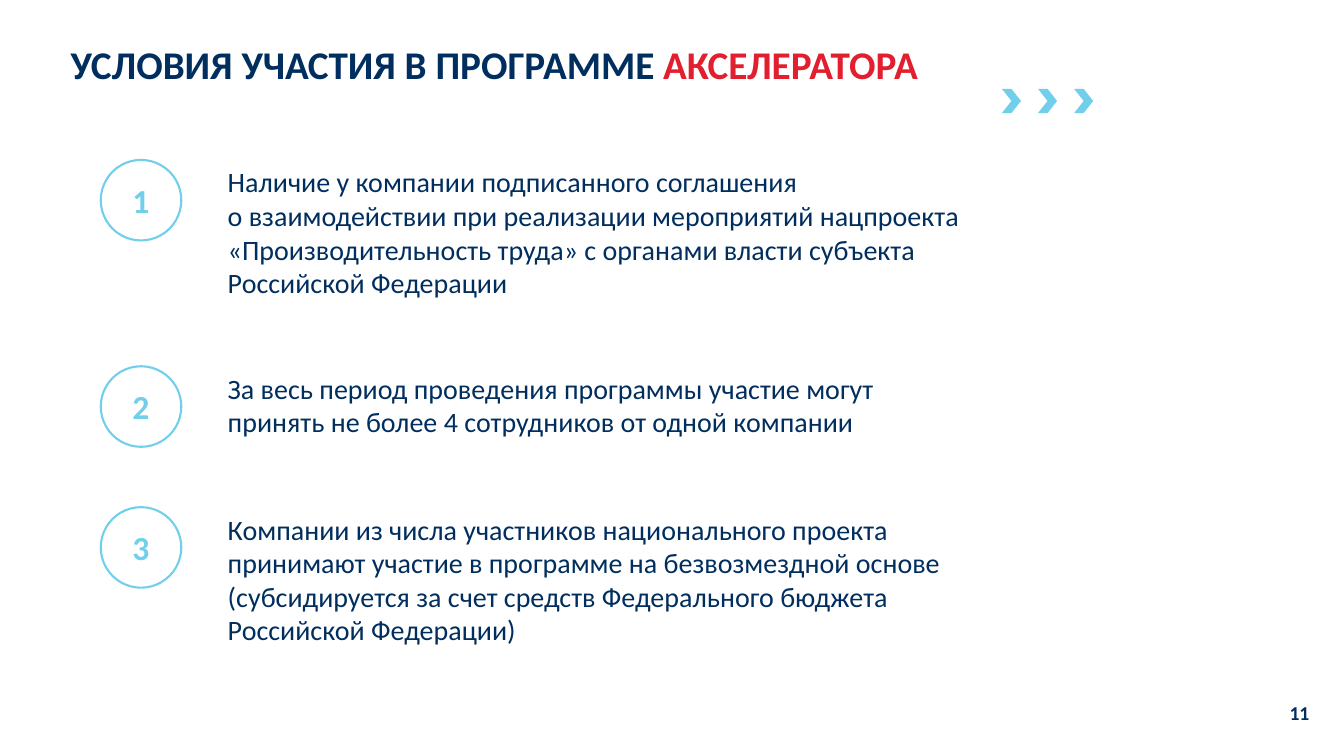
"""Build the slide on conditions for taking part in the accelerator programme."""
from pptx import Presentation
from pptx.dml.color import RGBColor
from pptx.enum.shapes import MSO_SHAPE
from pptx.enum.text import MSO_ANCHOR, MSO_AUTO_SIZE, PP_ALIGN
from pptx.util import Cm, Pt

LEFT, CENTER, JUSTIFY = PP_ALIGN.LEFT, PP_ALIGN.CENTER, PP_ALIGN.JUSTIFY
MIDDLE, BOTTOM = MSO_ANCHOR.MIDDLE, MSO_ANCHOR.BOTTOM
OVAL, CHEVRON = MSO_SHAPE.OVAL, MSO_SHAPE.CHEVRON
NO_AUTOFIT = MSO_AUTO_SIZE.NONE

FONT = "Calibri"
COLORS = {"navy": "002E5E", "red": "E21F2E", "sky": "71CFEB"}

TITLE = [("УСЛОВИЯ УЧАСТИЯ В ПРОГРАММЕ ", "navy"), ("АКСЕЛЕРАТОРА", "red")]
PAGE_NUMBER = "11"
CONDITIONS = [
    {"top": 4.03, "width": 25.27, "lines": [
        "Наличие у компании подписанного соглашения",
        "о взаимодействии при реализации мероприятий нацпроекта",
        "«Производительность труда» с органами власти субъекта",
        "Российской Федерации",
    ]},
    {"top": 9.23, "width": 22.07, "lines": [
        "За весь период проведения программы участие могут",
        "принять не более 4 сотрудников от одной компании",
    ]},
    {"top": 12.78, "width": 26.95, "lines": [
        "Компании из числа участников национального проекта",
        "принимают участие в программе на безвозмездной основе",
        "(субсидируется за счет средств Федерального бюджета",
        "Российской Федерации)",
    ]},
]

CIRCLE_LEFT, CIRCLE_SIZE = 2.54, 2.03
TEXT_LEFT, LINE_HEIGHT, TEXT_PADDING = 5.49, 0.86, 0.25
CHEVRON_COUNT, CHEVRON_LEFT, CHEVRON_STEP = 3, 25.25, 0.91


def color(name):
    return RGBColor.from_string(COLORS[name])


def add_run(paragraph, text, size, color_name, bold=False):
    run = paragraph.add_run()
    run.text = text
    run.font.name = FONT
    run.font.size = Pt(size)
    run.font.bold = bold
    run.font.color.rgb = color(color_name)


def clear_margins(frame):
    frame.margin_left = frame.margin_right = 0
    frame.margin_top = frame.margin_bottom = 0


def add_title(slide):
    title = slide.shapes.title
    title.left, title.top, title.width, title.height = Cm(1.78), Cm(1.07), Cm(26.42), Cm(1.14)
    frame = title.text_frame
    clear_margins(frame)
    frame.auto_size = NO_AUTOFIT
    frame.vertical_anchor = BOTTOM
    paragraph = frame.paragraphs[0]
    paragraph.alignment = LEFT
    paragraph.line_spacing = Pt(37)
    for text, color_name in TITLE:
        add_run(paragraph, text, 28, color_name, bold=True)


def add_text(slide, left, top, width, height, lines, size, alignment, bold=False):
    frame = slide.shapes.add_textbox(Cm(left), Cm(top), Cm(width), Cm(height)).text_frame
    frame.word_wrap = True
    for index, line in enumerate(lines):
        paragraph = frame.add_paragraph() if index else frame.paragraphs[0]
        paragraph.alignment = alignment
        add_run(paragraph, line, size, "navy", bold)
    return frame


def add_chevrons(slide):
    for index in range(CHEVRON_COUNT):
        left = CHEVRON_LEFT + index * CHEVRON_STEP
        chevron = slide.shapes.add_shape(CHEVRON, Cm(left), Cm(2.24), Cm(0.48), Cm(0.61))
        chevron.shadow.inherit = False
        chevron.fill.solid()
        chevron.fill.fore_color.rgb = color("sky")
        chevron.line.fill.background()


def add_number_circle(slide, number, top):
    circle = slide.shapes.add_shape(
        OVAL, Cm(CIRCLE_LEFT), Cm(top), Cm(CIRCLE_SIZE), Cm(CIRCLE_SIZE))
    circle.shadow.inherit = False
    circle.fill.background()
    circle.line.color.rgb = color("sky")
    circle.line.width = Pt(1.5)
    circle.text_frame.vertical_anchor = MIDDLE
    paragraph = circle.text_frame.paragraphs[0]
    paragraph.alignment = CENTER
    add_run(paragraph, str(number), 24, "sky", bold=True)


def main():
    presentation = Presentation()
    presentation.slide_width, presentation.slide_height = Cm(33.87), Cm(19.05)
    slide = presentation.slides.add_slide(presentation.slide_layouts[5])
    add_title(slide)
    add_chevrons(slide)
    for number, condition in enumerate(CONDITIONS, 1):
        top, lines = condition["top"], condition["lines"]
        height = len(lines) * LINE_HEIGHT + TEXT_PADDING
        add_number_circle(slide, number, top)
        add_text(slide, TEXT_LEFT, top, condition["width"], height, lines, 20, JUSTIFY)
    clear_margins(add_text(slide, 32.23, 17.65, 1.04, 0.97, [PAGE_NUMBER], 14, CENTER, bold=True))
    presentation.save("out.pptx")


if __name__ == "__main__":
    main()
